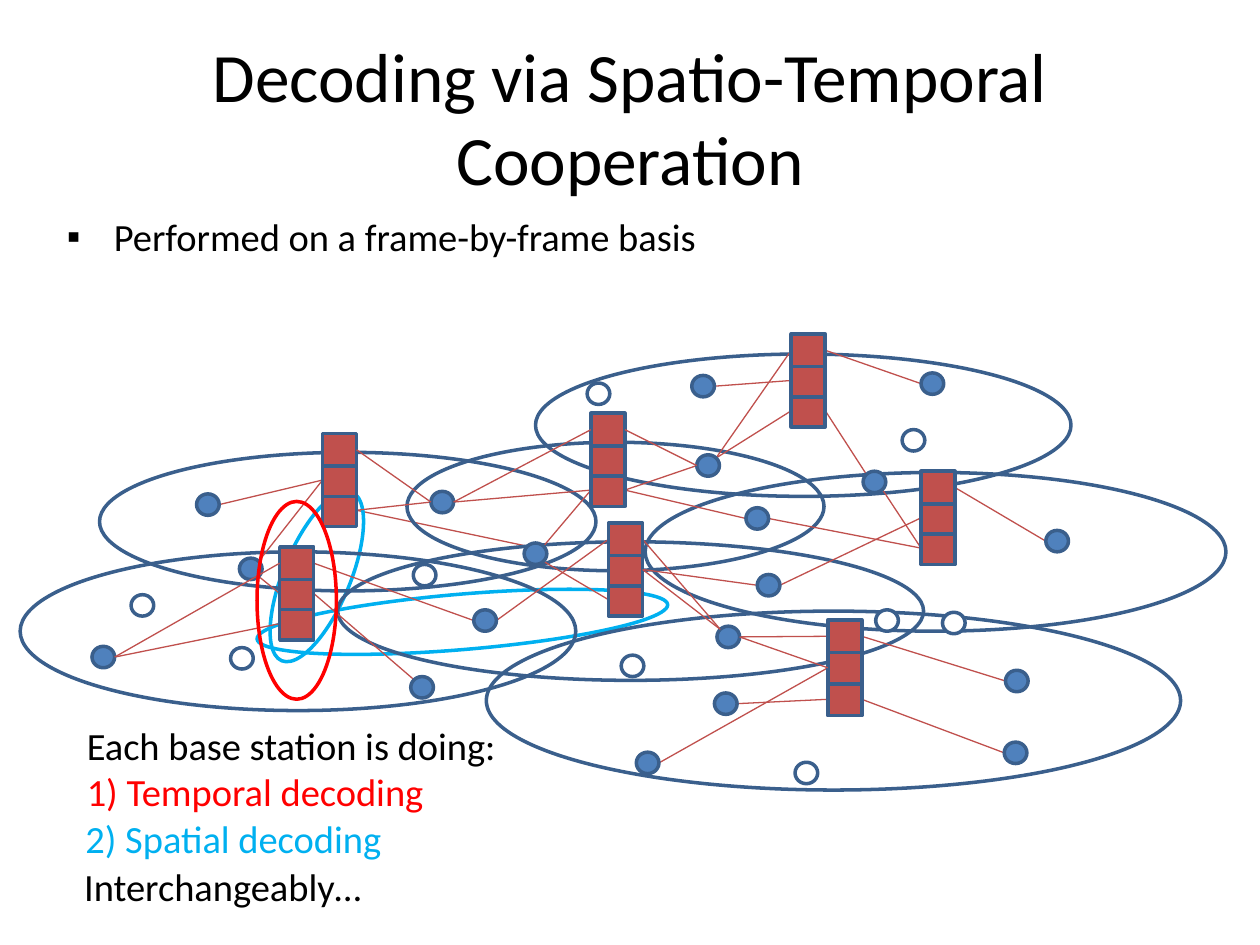
from lxml import etree
from pptx import Presentation, util as u
from pptx.dml.color import RGBColor
from pptx.enum import shapes as es, text as et
from pptx.oxml.ns import qn

HUE = {"ink": "000000", "edge": "3A5F8C", "node": "4F81BD", "idle": "FFFFFF",
       "cell": "C0504D", "time": "FF0000", "space": "00B0F0"}
UNIT = 2.54  # cm per layout unit
NODE_W, NODE_H = 0.18, 0.17
CELL_W, CELL_H = 0.27, 0.26

AREAS = [(0.79, 3.59, 3.94, 1.1), (2.68, 4.3, 4.65, 1.1), (3.23, 3.51, 3.31, 1.02),
         (5.12, 3.75, 4.61, 1.26), (0.16, 4.38, 4.41, 1.26),
         (4.25, 2.81, 4.25, 1.13), (3.86, 4.85, 5.51, 1.42)]
# Stations: left, top, step between cells
STATIONS = {"A": (2.56, 3.44, 0.24), "B": (2.22, 4.34, 0.24), "C": (4.69, 3.28, 0.24),
            "D": (4.83, 4.15, 0.24), "E": (6.28, 2.65, 0.24), "F": (7.31, 3.74, 0.24),
            "G": (6.57, 4.92, 0.25)}
USERS = {"a": (0.73, 5.13), "b": (1.56, 3.92), "c": (1.9, 4.43), "d": (3.42, 3.9),
         "e": (3.26, 5.37), "f": (3.76, 4.84), "g": (4.16, 4.31), "h": (5.53, 3.61),
         "i": (5.49, 2.98), "j": (5.92, 4.03), "k": (6.01, 4.56), "l": (5.69, 4.97),
         "m": (5.67, 5.5), "n": (5.05, 5.97), "o": (7.31, 2.96), "p": (6.85, 3.74),
         "q": (8.3, 4.21), "r": (7.98, 5.32), "s": (7.97, 5.89)}
IDLE = [(7.16, 3.41), (4.66, 3.04), (3.28, 4.48), (6.95, 4.84), (7.48, 4.86),
        (6.31, 6.05), (4.93, 5.2), (1.83, 5.14), (1.04, 4.72)]
# Spots on a node, as shares of its width and height
SPOTS = {"w": (0, 0.5), "e": (1, 0.5), "nw": (0.15, 0.15),
         "ne": (0.85, 0.15), "se": (0.85, 0.85)}
# Links: user, spot, station and cell
LOW = """a e B2, e nw B1, c se B1, f w B0, b e A1, c ne A1, d w A2, d e C2,
         g ne C2, h w C2, j w C2, h ne E2, h ne E0, p nw E2, o w E0, p se F2,
         q w F0, k e F1, j e F2, g se D2, f e D0, l nw D0, k w D1, l e G0,
         m e G2, n e G1, r w G0, s w G2, i e E1"""
HIGH = "d w A0, d e C0, a e B0, h w C0, l e G1, l nw D1"


def cm(*nums):
    return [u.Cm(UNIT * n) for n in nums]


def rgb(name):
    return RGBColor.from_string(HUE[name])


def put(item, vals):
    for key, val in vals.items():
        setattr(item, key, val)


def place(item, box):
    put(item, dict(zip(("left", "top", "width", "height"), cm(*box))))


def draw(slide, kind, box, edge="edge", fill=None, turn=0):
    shape = slide.shapes.add_shape(kind, *cm(*box))
    shape.shadow.inherit = False
    shape.rotation = turn
    if fill:
        shape.fill.solid()
        shape.fill.fore_color.rgb = rgb(fill)
    else:
        shape.fill.background()
    shape.line.color.rgb = rgb(edge)
    shape.line.width = u.Pt(2)


def oval(slide, *box, **look):
    draw(slide, es.MSO_SHAPE.OVAL, box, **look)


def stack(slide, left, top, step):
    """Draw a station: three cells, the lowest at the back."""
    for row in (2, 1, 0):
        draw(slide, es.MSO_SHAPE.RECTANGLE,
             (left, top + row * step, CELL_W, CELL_H), fill="cell")


def link(slide, user, spot, port):
    """Join a spot on a user to the near side of a station's cell."""
    x, y = USERS[user]
    dx, dy = SPOTS[spot]
    left, top, step = STATIONS[port[0]]
    side = left if x < left else left + CELL_W
    wire = slide.shapes.add_connector(
        es.MSO_CONNECTOR.STRAIGHT,
        *cm(x + dx * NODE_W, y + dy * NODE_H,
            side, top + CELL_H / 2 + int(port[1]) * step))
    wire.line.color.rgb = rgb("cell")
    wire.line.width = u.Pt(0.75)
    etree.SubElement(wire._element.spPr, qn("a:effectLst"))


def wires(slide, plan):
    for item in plan.split(","):
        link(slide, *item.split())


def write(para, words, size=22, hue="ink"):
    run = para.add_run()
    run.text = words
    put(run.font, {"name": "Calibri", "size": u.Pt(size)})
    run.font.color.rgb = rgb(hue)


def note(slide, box, *lines):
    frame = slide.shapes.add_textbox(*cm(*box)).text_frame
    frame.word_wrap = True
    for num, (words, hue) in enumerate(lines):
        para = frame.add_paragraph() if num else frame.paragraphs[0]
        write(para, words, hue=hue)


def heads(slide):
    """Fill the title and the one-line list."""
    title, body = slide.placeholders
    for item, box, mid in ((title, (0.5, 0.3, 9, 1.25), et.MSO_ANCHOR.MIDDLE),
                           (body, (0.43, 1.64, 8.65, 0.47), et.MSO_ANCHOR.TOP)):
        place(item, box)
        put(item.text_frame, {"word_wrap": True, "vertical_anchor": mid,
                              "auto_size": et.MSO_AUTO_SIZE.NONE})
    para = title.text_frame.paragraphs[0]
    para.alignment = et.PP_ALIGN.CENTER
    write(para, "Decoding via Spatio-Temporal Cooperation", 39.6)
    para = body.text_frame.paragraphs[0]
    para.space_before = u.Pt(0)
    write(para, "Performed on a frame-by-frame basis")
    props = para._p.get_or_add_pPr()
    dent = u.Cm(0.95)
    props.set("marL", str(dent))
    props.set("indent", str(-dent))
    etree.SubElement(props, qn("a:buChar"), char="▪")


def main():
    deck = Presentation()
    put(deck, dict(zip(("slide_width", "slide_height"), cm(10, 7.5))))
    slide = deck.slides.add_slide(deck.slide_layouts[1])
    heads(slide)

    oval(slide, 3.45, 3.3, 0.44, 3.27, edge="space", turn=85.2)
    link(slide, "g", "nw", "A2")
    oval(slide, 2.25, 3.85, 0.53, 1.45, edge="space", turn=22.6)
    for area in AREAS:
        oval(slide, *area)
    wires(slide, LOW)
    for spots, fill in ((USERS.values(), "node"), (IDLE, "idle")):
        for spot in spots:
            oval(slide, *spot, NODE_W, NODE_H, fill=fill)
    for base in STATIONS.values():
        stack(slide, *base)
    wires(slide, HIGH)
    oval(slide, 2.04, 3.98, 0.63, 1.57, edge="time")

    note(slide, (0.59, 5.68, 3.79, 0.84), ("Each base station is doing:", "ink"),
         ("1) Temporal decoding", "time"))
    note(slide, (0.58, 6.42, 3.79, 0.47), ("2) Spatial decoding", "space"))
    note(slide, (0.57, 6.8, 3.79, 0.47), ("Interchangeably…", "ink"))
    deck.save("out.pptx")


if __name__ == "__main__":
    main()
